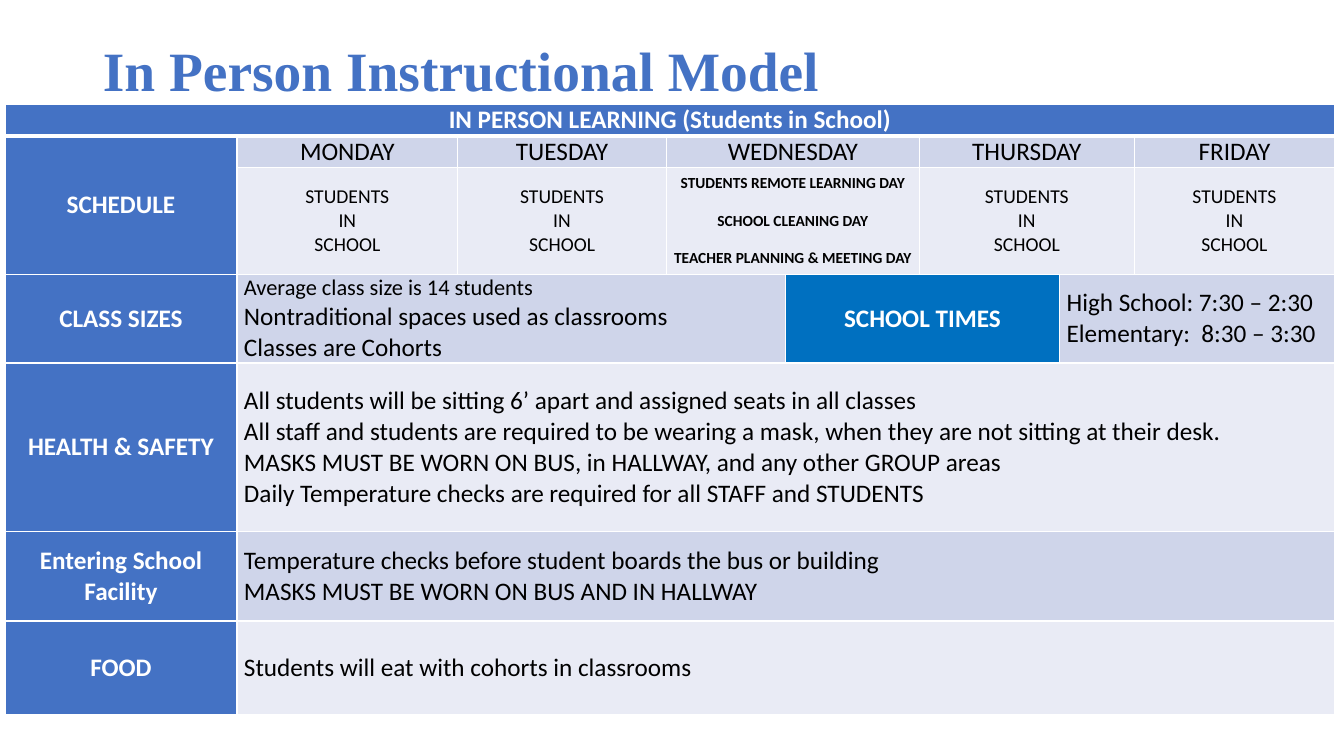
from pptx import Presentation
from pptx.dml.color import RGBColor
from pptx.enum.text import MSO_ANCHOR as Anchor, PP_ALIGN as Align
from pptx.oxml.ns import qn
from pptx.util import Inches, Pt
from lxml.etree import SubElement

BLUE, BRIGHT_BLUE = "4472C4", "0070C0"
PALE, PALER = "CFD5EA", "E9EBF5"
WHITE, BLACK = "FFFFFF", "000000"

COLUMNS = [2.3, 2.19, 2.07, 1.18, 1.33, 1.39, 0.74, 1.99]
ROWS = [0.31, 0.31, 1.06, 0.88, 1.67, 0.89, 0.93]
DAYS = [("MONDAY", 1, 1), ("TUESDAY", 2, 1), ("WEDNESDAY", 3, 2),
        ("THURSDAY", 5, 2), ("FRIDAY", 7, 1)]
IN_SCHOOL = ["STUDENTS", "IN", "SCHOOL"]
REMOTE = ["STUDENTS REMOTE LEARNING DAY", "SCHOOL CLEANING DAY",
          "TEACHER PLANNING & MEETING DAY"]
CLASS_SIZES = ["Average class size is 14 students",
               "Nontraditional spaces used as classrooms",
               "Classes are Cohorts"]
TIMES = ["High School: 7:30 – 2:30", "Elementary:\u00a0 8:30 – 3:30"]
POLICIES = [
    ("HEALTH & SAFETY", PALER, [
        "All students will be sitting 6’ apart and assigned seats in all classes",
        "All staff and students are required to be wearing a mask, "
        "when they are not sitting at their desk.",
        "MASKS MUST BE WORN ON BUS, in HALLWAY, and any other GROUP areas",
        "Daily Temperature checks are required for all STAFF and STUDENTS"]),
    ("Entering School Facility", PALE, [
        "Temperature checks before student boards the bus or building",
        "MASKS MUST BE WORN ON BUS AND IN HALLWAY"]),
    ("FOOD", PALER, ["Students will eat with cohorts in classrooms"]),
]


def color(value):
    return RGBColor.from_string(value)


def add_borders(cell, bottom=1):
    properties = cell._tc.get_or_add_tcPr()
    for side, width in (("L", 1), ("R", 1), ("T", 1), ("B", bottom)):
        line = SubElement(properties, qn(f"a:ln{side}"), w=str(Pt(width)))
        fill = SubElement(line, qn("a:solidFill"))
        SubElement(fill, qn("a:srgbClr"), val=WHITE)


def fill_cell(table, row, column, lines, fill, rows=1, columns=1, size=18,
              font_color=BLACK, bold=False, align=Align.CENTER, gap=0):
    cell = table.cell(row, column)
    if rows * columns > 1:
        cell.merge(table.cell(row + rows - 1, column + columns - 1))
    cell.fill.solid()
    cell.fill.fore_color.rgb = color(fill)
    cell.vertical_anchor = Anchor.MIDDLE
    cell.margin_left = cell.margin_right = Inches(0.07)
    cell.margin_top = cell.margin_bottom = 0
    cell.text = "\n".join(lines)
    for index, paragraph in enumerate(cell.text_frame.paragraphs):
        paragraph.alignment = align
        paragraph.space_before = Pt(gap if index else 0)
        font = paragraph.font
        font.name, font.size, font.bold = "Calibri", Pt(size), bold
        font.color.rgb = color(font_color)
    return cell


def fill_heading(table, row, column, text, fill=BLUE, **span):
    return fill_cell(table, row, column, [text], fill,
                     font_color=WHITE, bold=True, **span)


def fill_schedule(table):
    fill_heading(table, 1, 0, "SCHEDULE", rows=2)
    for day, column, columns in DAYS:
        fill_cell(table, 1, column, [day], PALE, columns=columns)
        if day == "WEDNESDAY":
            fill_cell(table, 2, column, REMOTE, PALER, columns=columns,
                      size=11, bold=True, gap=13.4)
        else:
            fill_cell(table, 2, column, IN_SCHOOL, PALER, columns=columns,
                      size=14)


def fill_class_sizes(table):
    fill_heading(table, 3, 0, "CLASS SIZES")
    sizes = fill_cell(table, 3, 1, CLASS_SIZES, PALE, columns=3,
                      align=Align.LEFT)
    sizes.text_frame.paragraphs[0].font.size = Pt(16)
    fill_heading(table, 3, 4, "SCHOOL TIMES", BRIGHT_BLUE, columns=2)
    fill_cell(table, 3, 6, TIMES, PALE, columns=2, align=Align.LEFT)


def fill_policies(table):
    for row, (heading, fill, lines) in enumerate(POLICIES, start=4):
        fill_heading(table, row, 0, heading)
        fill_cell(table, row, 1, lines, fill, columns=7, align=Align.LEFT)


def add_model_table(slide, left, top):
    frame = slide.shapes.add_table(
        len(ROWS), len(COLUMNS), Inches(left), Inches(top),
        Inches(sum(COLUMNS)), Inches(sum(ROWS)))
    table = frame.table
    table.horz_banding = False
    for column, width in zip(table.columns, COLUMNS):
        column.width = Inches(width)
    for index, (row, height) in enumerate(zip(table.rows, ROWS)):
        row.height = Inches(height)
        for cell in row.cells:
            add_borders(cell, bottom=1 if index else 3)
    header = fill_heading(table, 0, 0, "IN PERSON LEARNING (Students in School)",
                          columns=len(COLUMNS))
    header.vertical_anchor = Anchor.TOP
    fill_schedule(table)
    fill_class_sizes(table)
    fill_policies(table)


def format_title(slide, left, top, width, height):
    title = slide.shapes.title
    title.left, title.top = Inches(left), Inches(top)
    title.width, title.height = Inches(width), Inches(height)
    title.text = "In Person Instructional Model"
    title.text_frame.vertical_anchor = Anchor.TOP
    title.text_frame.margin_top = Inches(0.03)
    paragraph = title.text_frame.paragraphs[0]
    paragraph.alignment = Align.LEFT
    paragraph.line_spacing = 0.9
    font = paragraph.font
    font.name, font.size, font.bold = "Times New Roman", Pt(39.6), True
    font.color.rgb = color(BLUE)


def main():
    presentation = Presentation()
    presentation.slide_width = Inches(13.33)
    presentation.slide_height = Inches(7.5)
    slide = presentation.slides.add_slide(presentation.slide_layouts[5])
    format_title(slide, 0.92, 0.4, 11.5, 1.27)
    add_model_table(slide, 0.05, 1.04)
    presentation.save("out.pptx")


if __name__ == "__main__":
    main()
